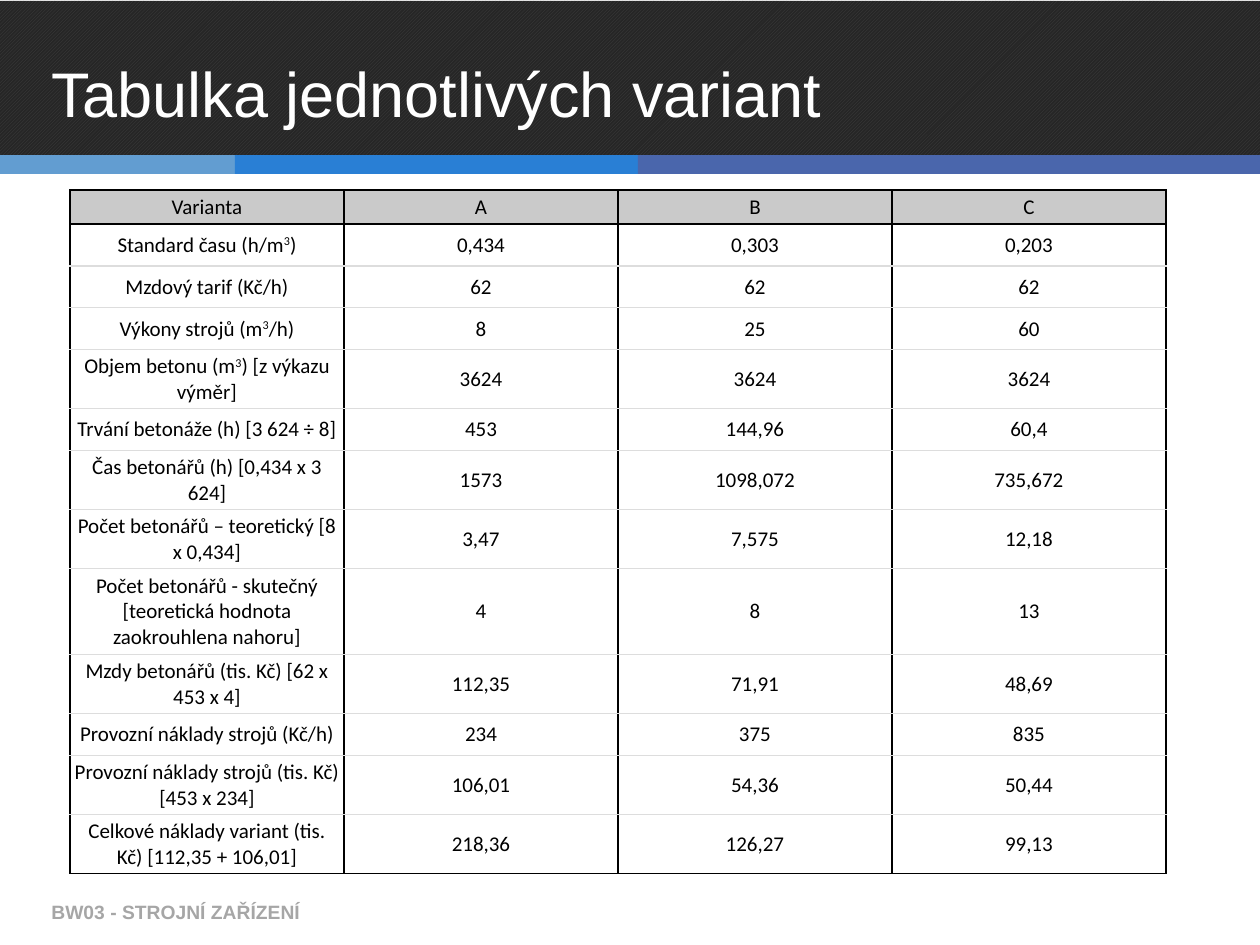
import lxml.etree
import pptx
import pptx.dml.color
import pptx.enum.dml
import pptx.enum.shapes
import pptx.enum.text
import pptx.oxml.ns
import pptx.util

PIXEL = 914400 / 126
COLORS = {
    "black": "000000",
    "white": "FFFFFF",
    "band_front": "404040",
    "band_back": "262626",
    "light_blue": "629DD1",
    "blue": "297FD5",
    "indigo": "4A66AC",
    "header": "CACACA",
    "row_line": "DDDDDD",
    "footer": "A6A6A6",
}

# Text between bars is superscript
ROWS = [
    ("Varianta", "A", "B", "C"),
    ("Standard času (h/m|3|)", "0,434", "0,303", "0,203"),
    ("Mzdový tarif (Kč/h)", "62", "62", "62"),
    ("Výkony strojů (m|3|/h)", "8", "25", "60"),
    ("Objem betonu (m|3|) [z výkazu výměr]", "3624", "3624", "3624"),
    ("Trvání betonáže (h) [3 624 ÷ 8]", "453", "144,96", "60,4"),
    ("Čas betonářů (h) [0,434 x 3 624]", "1573", "1098,072", "735,672"),
    ("Počet betonářů – teoretický [8 x 0,434]", "3,47", "7,575", "12,18"),
    ("Počet betonářů - skutečný [teoretická hodnota zaokrouhlena nahoru]",
     "4", "8", "13"),
    ("Mzdy betonářů (tis. Kč) [62 x 453 x 4]", "112,35", "71,91", "48,69"),
    ("Provozní náklady strojů (Kč/h)", "234", "375", "835"),
    ("Provozní náklady strojů (tis. Kč) [453 x 234]", "106,01", "54,36", "50,44"),
    ("Celkové náklady variant (tis. Kč) [112,35 + 106,01]",
     "218,36", "126,27", "99,13"),
]
HEADER_HEIGHT = 34
HEIGHT_BY_LINES = {1: 42, 2: 59, 3: 86}
LINES_PER_ROW = [1, 1, 1, 2, 1, 2, 2, 3, 2, 1, 2, 2]


def emu(*pixels):
    return [round(pixel * PIXEL) for pixel in pixels]


def rgb(name):
    return pptx.dml.color.RGBColor.from_string(COLORS[name])


def format_font(font, name, size, color, bold=False):
    font.name = name
    font.size = pptx.util.Pt(size)
    font.color.rgb = rgb(color)
    font.bold = bold


def add_rectangle(slide, box):
    shape = slide.shapes.add_shape(
        pptx.enum.shapes.MSO_SHAPE.RECTANGLE, *emu(*box))
    shape.shadow.inherit = False
    shape.line.fill.background()
    return shape


def add_text(slide, box, text, size, color, bold=False):
    text_frame = slide.shapes.add_textbox(*emu(*box)).text_frame
    text_frame.word_wrap = True
    text_frame.vertical_anchor = pptx.enum.text.MSO_ANCHOR.MIDDLE
    text_frame.text = text
    format_font(text_frame.paragraphs[0].runs[0].font, "Arial", size, color, bold)


def add_header(slide, left, top, width, height):
    # Hatched dark band
    band = add_rectangle(slide, (left, top + 1, width, height - 19))
    band.fill.patterned()
    band.fill.pattern = pptx.enum.dml.MSO_PATTERN.DARK_UPWARD_DIAGONAL
    band.fill.fore_color.rgb = rgb("band_front")
    band.fill.back_color.rgb = rgb("band_back")

    # Three-coloured stripe
    edges = [0, 235, 638, width]
    for start, end, color in zip(edges, edges[1:], ("light_blue", "blue", "indigo")):
        stripe = add_rectangle(
            slide, (left + start, top + height - 19, end - start, 19))
        stripe.fill.solid()
        stripe.fill.fore_color.rgb = rgb(color)

    # Title
    add_text(slide, (left + 39, top + 25, width - 78, 134),
             "Tabulka jednotlivých variant", 36, "white")


def set_borders(cell, top, bottom):
    properties = cell._tc.get_or_add_tcPr()
    sides = {"L": "black", "R": "black", "T": top, "B": bottom}
    for index, (side, color) in enumerate(sides.items()):
        line = lxml.etree.Element(pptx.oxml.ns.qn(f"a:ln{side}"))
        line.set("w", str(pptx.util.Pt(1 if color == "black" else 0.75)))
        fill = lxml.etree.SubElement(line, pptx.oxml.ns.qn("a:solidFill"))
        lxml.etree.SubElement(
            fill, pptx.oxml.ns.qn("a:srgbClr"), val=COLORS[color])
        properties.insert(index, line)


def fill_cell(cell, text, fill_color):
    cell.fill.solid()
    cell.fill.fore_color.rgb = rgb(fill_color)
    cell.vertical_anchor = pptx.enum.text.MSO_ANCHOR.MIDDLE
    (cell.margin_left, cell.margin_top,
     cell.margin_right, cell.margin_bottom) = emu(4, 4, 4, 4)
    paragraph = cell.text_frame.paragraphs[0]
    paragraph.alignment = pptx.enum.text.PP_ALIGN.CENTER
    for index, part in enumerate(text.split("|")):
        run = paragraph.add_run()
        run.text = part
        format_font(run.font, "Calibri", 12, "black")
        if index % 2:
            run.font._element.set("baseline", "30000")


def add_variant_table(slide, left, top, width):
    heights = [HEADER_HEIGHT] + [HEIGHT_BY_LINES[lines] for lines in LINES_PER_ROW]
    columns = len(ROWS[0])
    table = slide.shapes.add_table(
        len(ROWS), columns, *emu(left, top, width, sum(heights))).table
    table.first_row = False
    table.horz_banding = False
    for column in table.columns:
        column.width = emu(width / columns)[0]

    last = len(ROWS) - 1
    for row_index, (values, height) in enumerate(zip(ROWS, heights)):
        table.rows[row_index].height = emu(height)[0]
        top_color = "black" if row_index <= 1 else "row_line"
        bottom_color = "black" if row_index in (0, last) else "row_line"
        for column_index, value in enumerate(values):
            cell = table.cell(row_index, column_index)
            fill_cell(cell, value, "white" if row_index else "header")
            set_borders(cell, top_color, bottom_color)


def add_footer(slide, left, top, width, height):
    add_text(slide, (left, top, width, height),
             "BW03 - STROJNÍ ZAŘÍZENÍ", 11, "footer", bold=True)


def main():
    presentation = pptx.Presentation()
    presentation.slide_width, presentation.slide_height = emu(1260, 945)
    slide = presentation.slides.add_slide(presentation.slide_layouts[6])
    add_header(slide, 0, 0, 1260, 174)
    add_variant_table(slide, 70, 190, 1096)
    add_footer(slide, 39, 887, 844, 50)
    presentation.save("out.pptx")


if __name__ == "__main__":
    main()
